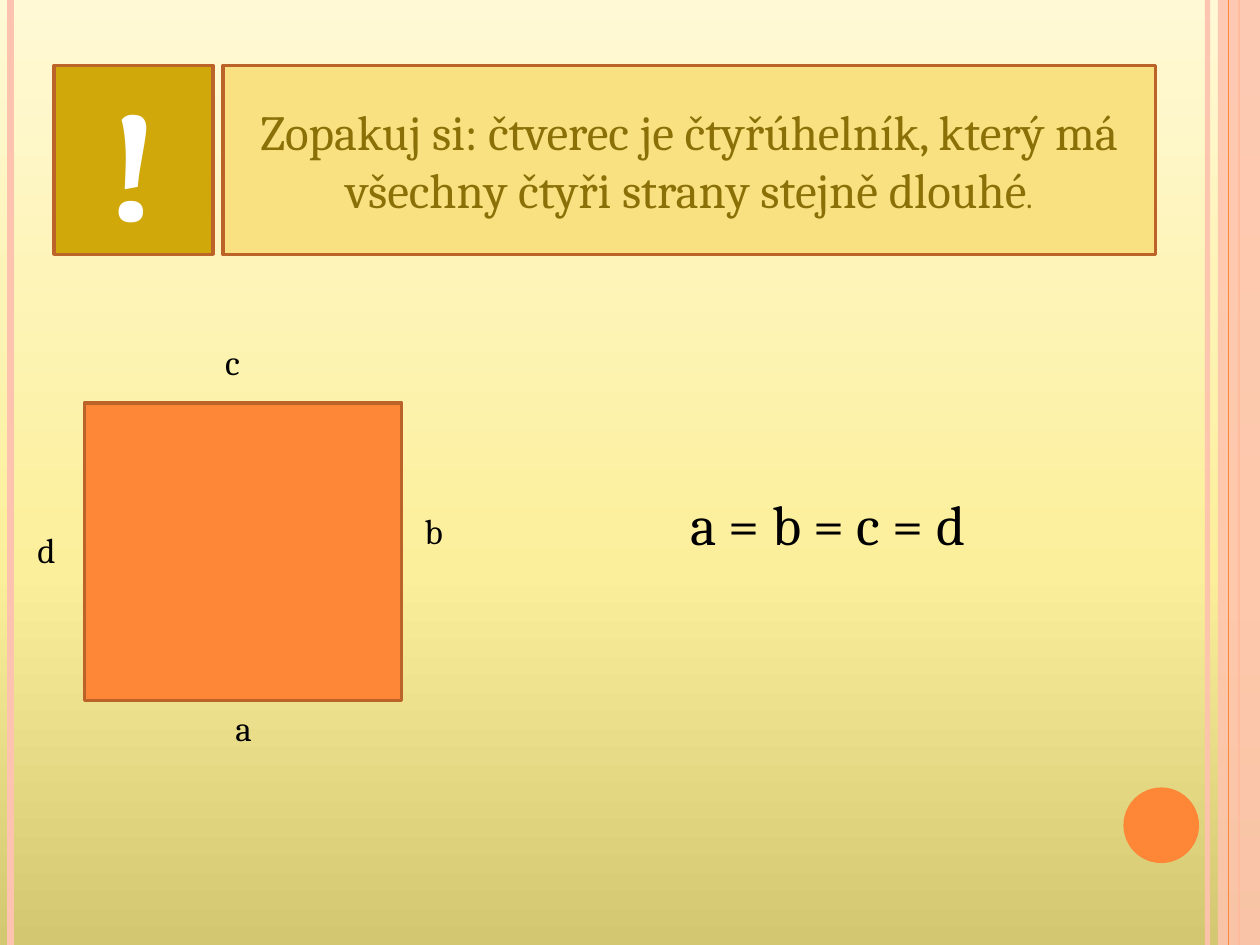
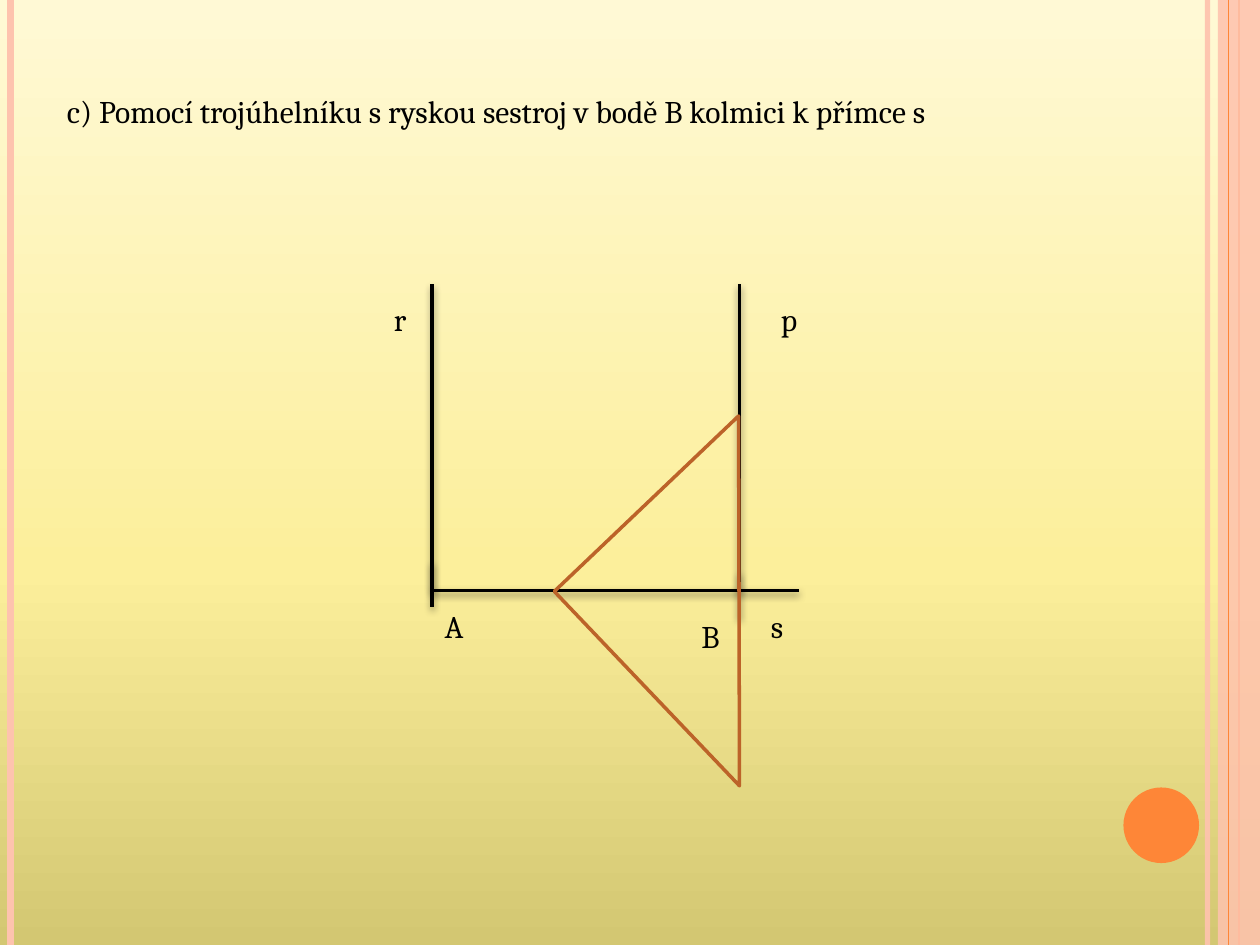
from copy import deepcopy
from dataclasses import dataclass

from lxml.etree import SubElement
from pptx import Presentation
from pptx.dml.color import RGBColor
from pptx.enum.shapes import MSO_CONNECTOR, MSO_SHAPE
from pptx.enum.text import MSO_ANCHOR, MSO_AUTO_SIZE, PP_ALIGN
from pptx.oxml.ns import qn
from pptx.util import Pt


@dataclass(frozen=True)
class Theme:
    font: str = "Cambria"
    ink: str = "000000"
    white: str = "FFFFFF"
    orange: str = "FE8637"
    rust: str = "BC6329"
    pink: str = "FEC3AE"
    gold: str = "D0A80A"
    cream: str = "F9E181"
    olive: str = "8A7007"
    sky: tuple = ((0, "D3C772"), (0.4, "FCEF9B"), (1, "FFF9D5"))
    edge: float = 2
    body: int = 18
    label: int = 20
    lead: int = 28
    sum: int = 32
    mark: int = 88


T = Theme()
WIDE, HIGH = 720, 540


def tint(name):
    return RGBColor.from_string(name)


def place(shape, box):
    shape.left, shape.top, shape.width, shape.height = map(Pt, box)


def write(shape, text, size, color=T.ink, align=PP_ALIGN.LEFT,
          anchor=MSO_ANCHOR.TOP, bold=False):
    frame = shape.text_frame
    frame.word_wrap = True
    frame.vertical_anchor = anchor
    frame.text = text
    para = frame.paragraphs[0]
    para.alignment = align
    for run in para.runs:
        style(run, size, color, bold)
    return para


def style(run, size, color, bold=False):
    run.font.name = T.font
    run.font.size = Pt(size)
    run.font.bold = bold
    run.font.color.rgb = tint(color)


def paint(shape, fill=None, line=None):
    shape.shadow.inherit = False
    if fill:
        shape.fill.solid()
        shape.fill.fore_color.rgb = tint(fill)
    else:
        shape.fill.background()
    if line:
        shape.line.color.rgb = tint(line)
        shape.line.width = Pt(T.edge)
    else:
        shape.line.fill.background()


def draw(slide, kind, box, fill=None, line=None):
    shape = slide.shapes.add_shape(kind, *map(Pt, box))
    paint(shape, fill, line)
    return shape


def label(slide, text, box, size, align=PP_ALIGN.LEFT):
    shape = slide.shapes.add_textbox(*map(Pt, box))
    write(shape, text, size, align=align)
    shape.text_frame.auto_size = MSO_AUTO_SIZE.SHAPE_TO_FIT_TEXT


def rule(slide, start, end, color=T.ink, width=T.edge, shade=False):
    line = slide.shapes.add_connector(
        MSO_CONNECTOR.STRAIGHT, *map(Pt, (*start, *end)))
    line.line.color.rgb = tint(color)
    line.line.width = Pt(width)
    effect = SubElement(line.element.spPr, qn("a:effectLst"))
    if shade:
        cast = SubElement(effect, qn("a:outerShdw"), blurRad=str(Pt(4)),
                          dist=str(Pt(2)), dir="5400000", rotWithShape="0")
        hue = SubElement(cast, qn("a:srgbClr"), val=T.ink)
        SubElement(hue, qn("a:alpha"), val="40000")
    return line


def fade(shape, part):
    for hue in shape.element.spPr.iter(qn("a:srgbClr")):
        SubElement(hue, qn("a:alpha"), val=str(part * 1000))


def backdrop(master):
    fill = master.background.fill
    fill.gradient()
    fill.gradient_angle = 90
    stops = master.element.find(".//" + qn("a:gsLst"))
    stops.append(deepcopy(stops[0]))
    for stop, (spot, color) in zip(fill.gradient_stops, T.sky):
        stop.position = spot
        stop.color.rgb = tint(color)


def frame(slide, master):
    def stripe(x, color, width):
        return rule(slide, (x, 0), (x, HIGH), color, width)

    inner = stripe(690, T.pink, 3)
    fade(inner, 93)
    left = stripe(6, T.pink, 4.5)
    outer = stripe(708, T.orange, 1.5)
    band = draw(slide, MSO_SHAPE.RECTANGLE, (696, 0, 24, HIGH), T.pink)
    fade(band, 87)
    thin = stripe(702, T.orange, 0.75)
    disc = draw(slide, MSO_SHAPE.OVAL, (642, 450, 43.2, 43.2), T.orange)
    for mark, item in enumerate((inner, left, outer, band, thin, disc), 20):
        item.element.xpath(".//p:cNvPr")[0].set("id", str(mark))
        master.shapes.element.append(item.element)


def head(slide, text, box, size, color=T.ink, align=PP_ALIGN.LEFT,
         anchor=MSO_ANCHOR.TOP):
    title = slide.shapes.title
    place(title, box)
    para = write(title, text, size, color, align, anchor)
    title.text_frame.auto_size = MSO_AUTO_SIZE.NONE
    return title, para


def square(slide):
    top, tall = 37.4, 108
    banner, para = head(
        slide,
        "Zopakuj si: čtverec je čtyřúhelník, který má "
        "všechny čtyři strany stejně dlouhé",
        (127.4, top, 532.8, tall), T.lead, T.olive,
        PP_ALIGN.CENTER, MSO_ANCHOR.MIDDLE)
    paint(banner, T.cream, T.rust)
    stop = para.add_run()
    stop.text = "."
    style(stop, T.body, T.olive)
    alert = draw(slide, MSO_SHAPE.RECTANGLE, (31, top, 90.7, tall),
                 T.gold, T.rust)
    write(alert, "!", T.mark, T.white, PP_ALIGN.CENTER,
          MSO_ANCHOR.MIDDLE, True)
    draw(slide, MSO_SHAPE.RECTANGLE, (48.2, 230.4, 181.4, 169.9),
         T.orange, T.rust)
    sides = (("c", 121.5, 190.8, 57), ("b", 235.6, 287.4, 45),
             ("a", 127.4, 400.3, 68), ("d", 14.2, 298.4, 51))
    for name, x, y, width in sides:
        label(slide, name, (x, y, width, 31.5), T.label)
    label(slide, "a = b = c = d", (297.5, 276, 351, 46), T.sum,
          PP_ALIGN.CENTER)


def normal(slide):
    head(slide,
         "c) Pomocí trojúhelníku s ryskou sestroj v bodě B "
         "kolmici k přímce s",
         (31, 49, 623.5, 28.8), T.body)
    base, peak, tick = 337.5, 162, 26
    rule(slide, (247, base), (456.5, base), shade=True)
    for x, y in ((247, 321), (422.5, 327)):
        rule(slide, (x, y), (x, y + tick), shade=True)
        rule(slide, (x, base), (x, peak), shade=True)
    ruler = draw(slide, MSO_SHAPE.RIGHT_TRIANGLE,
                 (345.6, 270.7, 153.4, 145.4), line=T.rust)
    ruler.rotation = 46.4
    names = (("B", 393.8, 349.2, 22.5), ("A", 247, 343.4, 28),
             ("r", 218, 167.8, 22.5), ("s", 433.4, 343.4, 39.5),
             ("p", 439.2, 167.8, 28))
    for name, x, y, width in names:
        label(slide, name, (x, y, width, 28.8), T.body)


def main():
    deck = Presentation()
    deck.slide_width, deck.slide_height = Pt(WIDE), Pt(HIGH)
    master = deck.slide_master
    plain = deck.slide_layouts[5]
    backdrop(master)
    first = deck.slides.add_slide(plain)
    frame(first, master)
    square(first)
    normal(deck.slides.add_slide(plain))
    deck.save("out.pptx")


if __name__ == "__main__":
    main()
